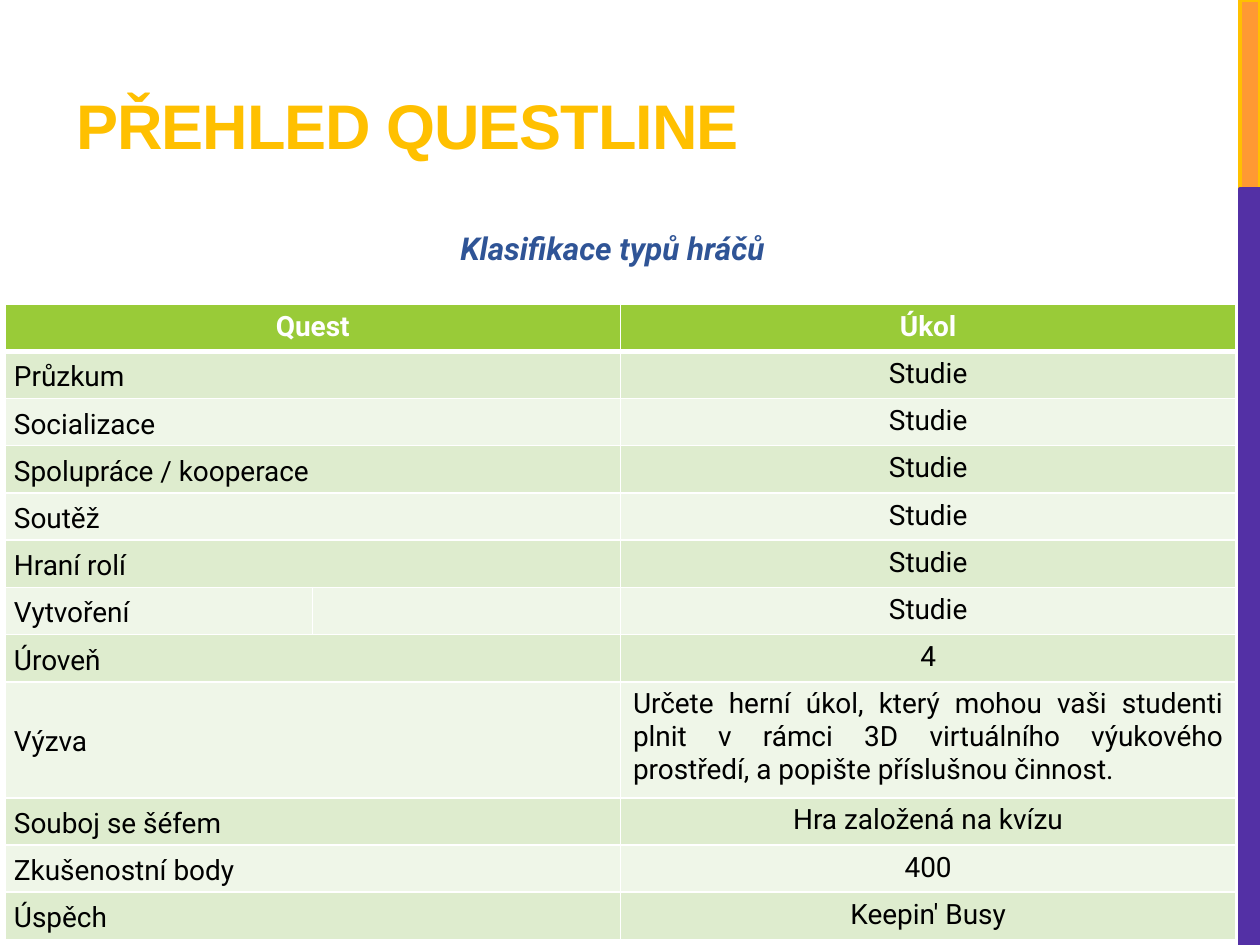
import pptx
import pptx.util
import pptx.dml.color
import pptx.enum.shapes
import pptx.enum.text
import lxml.etree
import pptx.oxml.ns

PX = 914400 / 126
ALIGN = pptx.enum.text.PP_ALIGN
ANCHOR = pptx.enum.text.MSO_ANCHOR
BANDS = ["EFF6E8", "DEECCE"]
CHALLENGE = ("Určete herní úkol, který mohou vaši studenti plnit v rámci 3D "
             "virtuálního výukového prostředí, a popište příslušnou činnost.")
ROWS = [
    ("Quest", "Úkol"),
    ("Průzkum", "Studie"),
    ("Socializace", "Studie"),
    ("Spolupráce / kooperace", "Studie"),
    ("Soutěž", "Studie"),
    ("Hraní rolí", "Studie"),
    ("Vytvoření", "Studie"),
    ("Úroveň", "4"),
    ("Výzva", CHALLENGE),
    ("Souboj se šéfem", "Hra založená na kvízu"),
    ("Zkušenostní body", "400"),
    ("Úspěch", "Keepin' Busy"),
]
SPLIT_ROW = 6
TALL_ROW = 8


def px(n):
    return pptx.util.Emu(round(n * PX))


def color(value):
    return pptx.dml.color.RGBColor.from_string(value)


def set_font(p, name, size, value, bold=False, italic=False):
    p.font.name = name
    p.font.size = pptx.util.Pt(size)
    p.font.color.rgb = color(value)
    p.font.bold = bold
    p.font.italic = italic


def add_text(slide, box, text):
    tf = slide.shapes.add_textbox(*map(px, box)).text_frame
    tf.word_wrap = True
    p = tf.paragraphs[0]
    p.add_run().text = text
    return tf, p


def add_side_bar(slide, x, y, w, h):
    top = h // 5
    parts = [(y, top, "FF9933", "FFC000"), (y + top, h - top, "5330A5", "5330A5")]
    for part_y, part_h, fill, line in parts:
        sp = slide.shapes.add_shape(pptx.enum.shapes.MSO_SHAPE.RECTANGLE,
                                    px(x), px(part_y), px(w), px(part_h))
        sp.shadow.inherit = False
        sp.fill.solid()
        sp.fill.fore_color.rgb = color(fill)
        sp.line.color.rgb = color(line)
        sp.line.width = pptx.util.Pt(2.25)


def add_title(slide, *box):
    tf, p = add_text(slide, box, "PŘEHLED QUESTLINE")
    tf.vertical_anchor = ANCHOR.BOTTOM
    set_font(p, "Arial", 36, "FFC000", bold=True)
    p.runs[0]._r.get_or_add_rPr().set("spc", "-60")


def add_subtitle(slide, *box):
    tf, p = add_text(slide, box, "Klasifikace typů hráčů")
    tf.auto_size = pptx.enum.text.MSO_AUTO_SIZE.SHAPE_TO_FIT_TEXT
    p.alignment = ALIGN.CENTER
    p.line_spacing = 1.5
    p.space_after = pptx.util.Pt(6)
    set_font(p, "Roboto", 18, "2F5496", bold=True, italic=True)


def set_borders(cell, top, bottom):
    tcPr = cell._tc.get_or_add_tcPr()
    qn = pptx.oxml.ns.qn
    for side, width in (("L", 1), ("R", 1), ("T", top), ("B", bottom)):
        ln = lxml.etree.SubElement(tcPr, qn("a:ln" + side), w=str(pptx.util.Pt(width)))
        fill = lxml.etree.SubElement(ln, qn("a:solidFill"))
        lxml.etree.SubElement(fill, qn("a:srgbClr"), val="FFFFFF")


def style_cell(cell, row, col):
    header = row == 0
    set_borders(cell, 3 if row == 1 else 1, 3 if header else 1)
    cell.fill.solid()
    cell.fill.fore_color.rgb = color("99CB38" if header else BANDS[row % 2])
    p = cell.text_frame.paragraphs[0]
    p.alignment = ALIGN.CENTER
    if not header and col < 2:
        cell.vertical_anchor = ANCHOR.MIDDLE
        cell.margin_left = cell.margin_right = px(9)
        cell.margin_top = cell.margin_bottom = 0
        p.alignment = ALIGN.JUSTIFY
        p.line_spacing = 1.15
        p.space_after = pptx.util.Pt(3)
        if cell.text:
            p.space_before = pptx.util.Pt(3)
    elif row == TALL_ROW:
        p.alignment = ALIGN.JUSTIFY
    set_font(p, "Roboto", 16, "FFFFFF" if header else "000000", bold=header)


def add_quest_table(slide, x, y, w, h):
    table = slide.shapes.add_table(len(ROWS), 3, px(x), px(y), px(w), px(h)).table
    table.first_row = False
    table.horz_banding = False
    for col, share in zip(table.columns, (0.25, 0.25, 0.5)):
        col.width = px(w * share)
    tall = 116
    for i, (quest, task) in enumerate(ROWS):
        table.rows[i].height = px(tall if i == TALL_ROW else (h - tall) / (len(ROWS) - 1))
        table.cell(i, 0).text = quest
        table.cell(i, 2).text = task
        for j in range(3):
            style_cell(table.cell(i, j), i, j)
        if i != SPLIT_ROW:
            table.cell(i, 0).merge(table.cell(i, 1))


def main():
    prs = pptx.Presentation()
    prs.slide_width, prs.slide_height = px(1260), px(945)
    slide = prs.slides.add_slide(prs.slide_layouts[6])
    add_side_bar(slide, 1240, 0, 20, 945)
    add_title(slide, 64, 63, 798, 105)
    add_subtitle(slide, 63, 204, 1099, 64)
    add_quest_table(slide, 5, 304, 1231, 636)
    prs.save("out.pptx")


if __name__ == "__main__":
    main()
